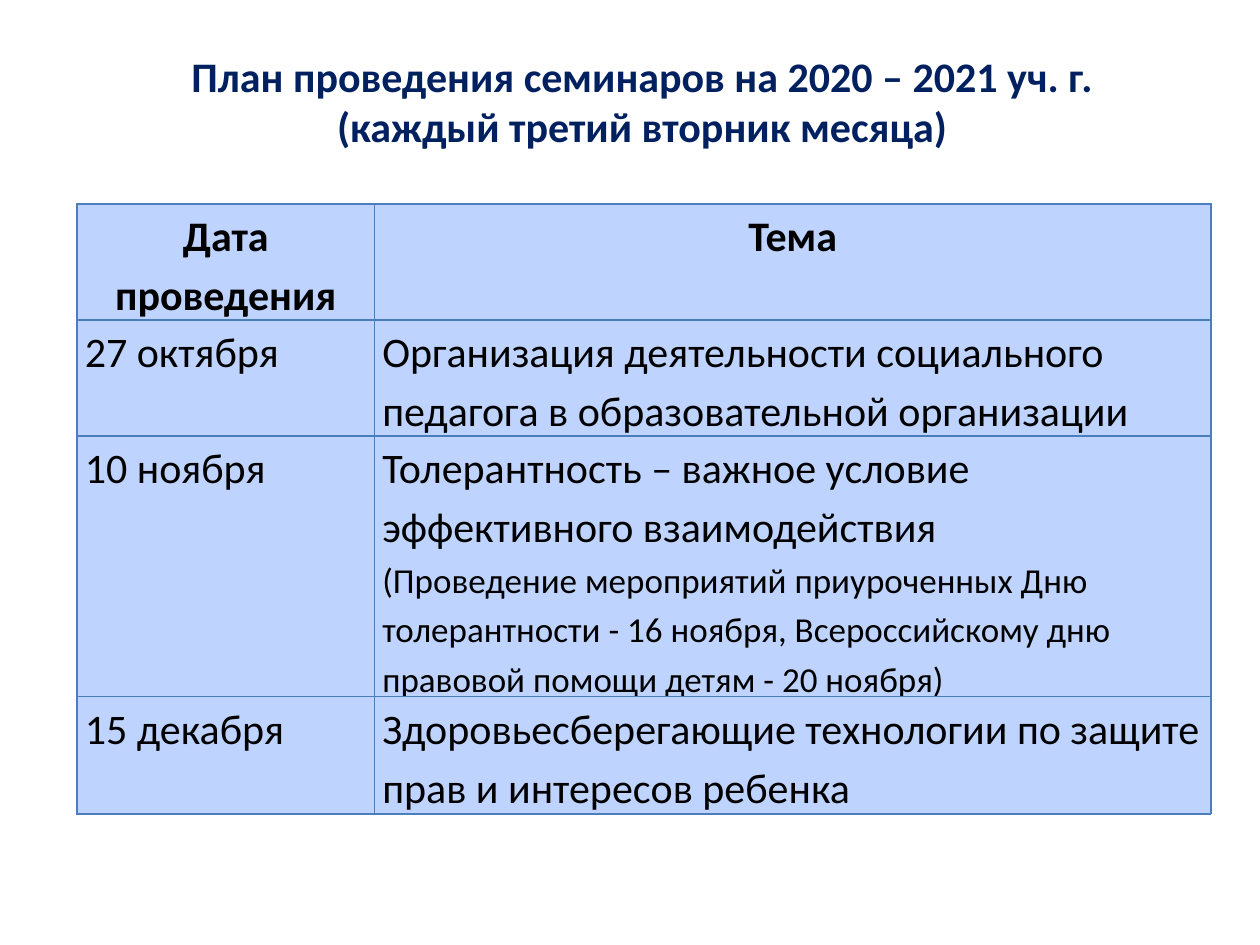
from lxml.etree import SubElement
from pptx import Presentation
from pptx.dml.color import RGBColor
from pptx.enum.text import MSO_ANCHOR, MSO_AUTO_SIZE, PP_ALIGN
from pptx.oxml.ns import qn
from pptx.util import Pt

COLORS = {"title": "002060", "text": "000000", "cell": "BFD3FF", "border": "4B7EBC"}
TITLE = ["План проведения семинаров на 2020 – 2021 уч. г.", "(каждый третий вторник месяца)"]
SEMINARS = [
    ("Дата проведения", ["Тема"]),
    ("27 октября", ["Организация деятельности социального педагога в образовательной организации"]),
    ("10 ноября", [
        "Толерантность – важное условие эффективного взаимодействия",
        "(Проведение мероприятий приуроченных Дню толерантности - 16 ноября, "
        "Всероссийскому дню правовой помощи детям - 20 ноября)",
    ]),
    ("15 декабря", ["Здоровьесберегающие технологии по защите прав и интересов ребенка"]),
]
TITLE_BOX = {"left": 100, "top": 25, "width": 534, "height": 66}
TABLE_LEFT, TABLE_TOP = 44, 116.6
COLUMN_WIDTHS = [170, 478]
ROW_HEIGHTS = [66.3, 66.3, 149, 66.9]
BORDER_WIDTH = 0.75
CELL_FORMAT = {
    "margin_left": Pt(4.5), "margin_right": Pt(4.5), "margin_top": 0, "margin_bottom": 0,
    "vertical_anchor": MSO_ANCHOR.TOP,
}
TITLE_FORMAT = {
    "word_wrap": False, "auto_size": MSO_AUTO_SIZE.SHAPE_TO_FIT_TEXT,
    "vertical_anchor": MSO_ANCHOR.TOP,
}


def apply(target, values):
    """Set every attribute in a dict of format values."""
    for name, value in values.items():
        setattr(target, name, value)


def write(frame, lines, sizes, color, bold, align, spacing):
    """Write one formatted paragraph for each line."""
    for index, (line, size) in enumerate(zip(lines, sizes)):
        para = frame.add_paragraph() if index else frame.paragraphs[0]
        apply(para, {"alignment": align, "line_spacing": spacing, "space_before": Pt(0)})
        span = para.add_run()
        span.text = line
        apply(span.font, {"name": "Calibri", "size": Pt(size), "bold": bold})
        span.font.color.rgb = RGBColor.from_string(COLORS[color])


def style_cell(cell):
    """Give a cell its margins, borders and fill."""
    apply(cell, CELL_FORMAT)
    properties = cell._tc.get_or_add_tcPr()
    for side in ("a:lnL", "a:lnR", "a:lnT", "a:lnB"):
        line = SubElement(properties, qn(side), w=str(Pt(BORDER_WIDTH)))
        SubElement(SubElement(line, qn("a:solidFill")), qn("a:srgbClr"), val=COLORS["border"])
    cell.fill.solid()
    cell.fill.fore_color.rgb = RGBColor.from_string(COLORS["cell"])


def main():
    """Build the seminar plan slide."""
    deck = Presentation()
    apply(deck, {"slide_width": Pt(720), "slide_height": Pt(540)})
    page = deck.slides.add_slide(deck.slide_layouts[5])

    title = page.shapes.title
    apply(title, {name: Pt(value) for name, value in TITLE_BOX.items()})
    apply(title.text_frame, TITLE_FORMAT)
    write(title.text_frame, TITLE, [24, 24], "title", True, PP_ALIGN.CENTER, 1.0)

    table = page.shapes.add_table(
        len(ROW_HEIGHTS), len(COLUMN_WIDTHS), Pt(TABLE_LEFT), Pt(TABLE_TOP),
        Pt(sum(COLUMN_WIDTHS)), Pt(sum(ROW_HEIGHTS)),
    ).table
    apply(table, {"first_row": False, "horz_banding": False})
    for column, width in zip(table.columns, COLUMN_WIDTHS):
        column.width = Pt(width)
    for number, (date, topic) in enumerate(SEMINARS):
        table.rows[number].height = Pt(ROW_HEIGHTS[number])
        header = number == 0
        align = PP_ALIGN.CENTER if header else PP_ALIGN.LEFT
        for cell, lines in zip(table.rows[number].cells, ([date], topic)):
            style_cell(cell)
            write(cell.text_frame, lines, [24, 20], "text", header, align, 1.15)

    deck.save("out.pptx")


if __name__ == "__main__":
    main()
